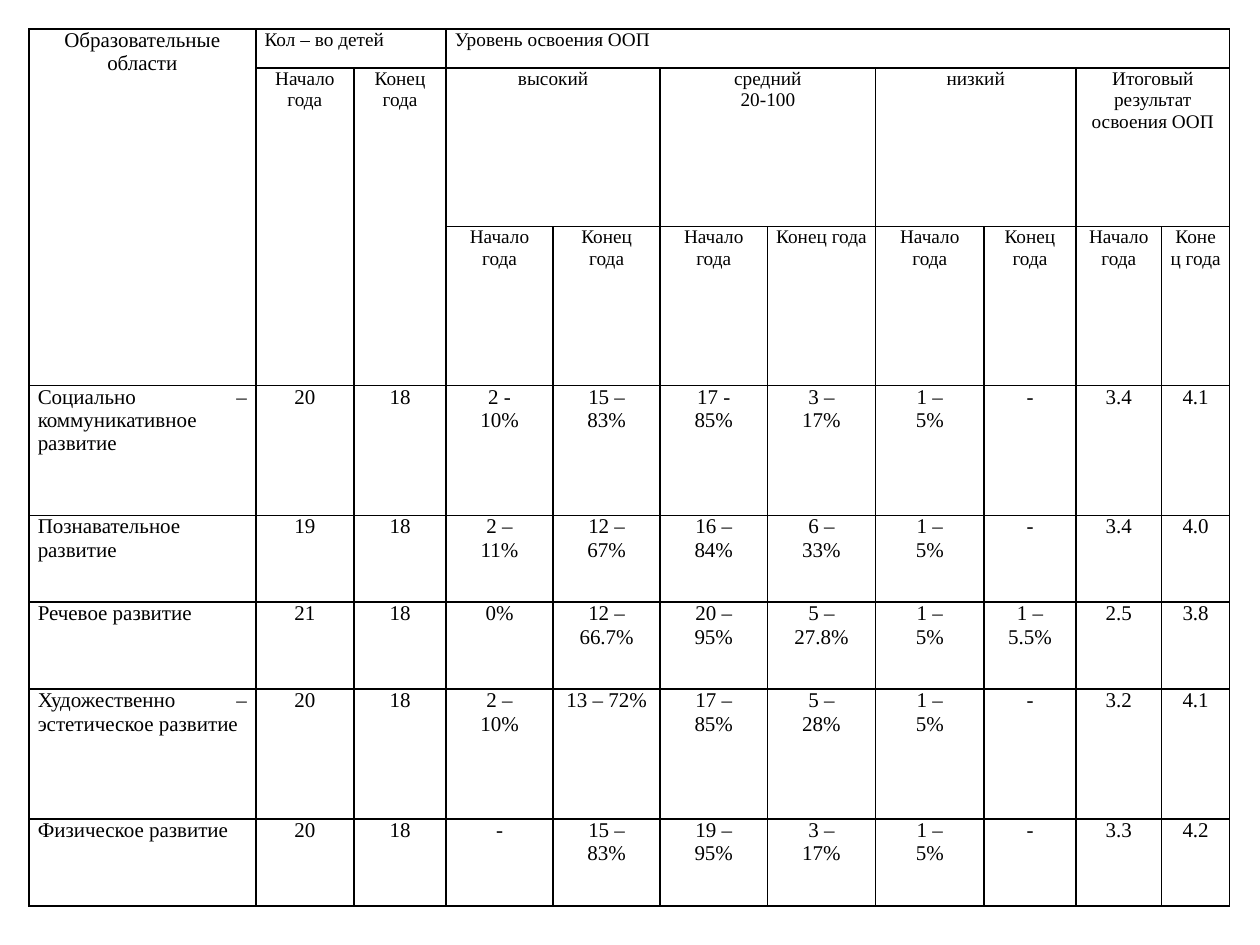
from lxml.etree import SubElement
from pptx import Presentation
from pptx.dml.color import RGBColor
from pptx.enum.text import PP_ALIGN as Align
from pptx.oxml.ns import qn
from pptx.util import Inches, Pt

BLACK = RGBColor(0, 0, 0)
FONT = "Times New Roman"
COLUMN_WIDTHS = [1.8, 0.78, 0.73, 0.85, 0.85, 0.85, 0.86, 0.86, 0.73, 0.68, 0.54]
ROW_HEIGHTS = [0.31, 1.26, 1.26, 1.03, 0.69, 0.69, 1.03, 0.69]
START, END = "Начало\nгода", "Конец года"
LEVELS = ["высокий", "средний\n20-100", "низкий", "Итоговый результат освоения ООП"]
RESULTS = [
    ["Социально – коммуникативное развитие", "20", "18", "2 -\n10%", "15 –\n83%",
     "17 -\n85%", "3 –\n17%", "1 –\n5%", "-", "3.4", "4.1"],
    ["Познавательное развитие", "19", "18", "2 –\n11%", "12 –\n67%",
     "16 –\n84%", "6 –\n33%", "1 –\n5%", "-", "3.4", "4.0"],
    ["Речевое развитие", "21", "18", "0%", "12 –\n66.7%",
     "20 –\n95%", "5 –\n27.8%", "1 –\n5%", "1 –\n5.5%", "2.5", "3.8"],
    ["Художественно – эстетическое развитие", "20", "18", "2 –\n10%", "13 – 72%",
     "17 –\n85%", "5 –\n28%", "1 –\n5%", "-", "3.2", "4.1"],
    ["Физическое развитие", "20", "18", "-", "15 –\n83%",
     "19 –\n95%", "3 –\n17%", "1 –\n5%", "-", "3.3", "4.2"],
]


def write(cell, text, size=11, align=Align.CENTER):
    """Put formatted text in a cell, one paragraph per line."""
    cell.text_frame.text = text
    for paragraph in cell.text_frame.paragraphs:
        paragraph.alignment = align
        paragraph.font.size = Pt(size)
        for run in paragraph.runs:
            run.font.size = Pt(size)
            run.font.name = FONT
            run.font.color.rgb = BLACK


def style_cell(cell):
    """Give a cell thin black borders, tight margins and no fill."""
    properties = cell._tc.get_or_add_tcPr()
    for side in ("a:lnL", "a:lnR", "a:lnT", "a:lnB"):
        line = SubElement(properties, qn(side), w=str(Pt(1)))
        fill = SubElement(line, qn("a:solidFill"))
        SubElement(fill, qn("a:srgbClr"), val=str(BLACK))
    cell.fill.background()
    cell.margin_left = cell.margin_right = Inches(0.07)
    cell.margin_top = cell.margin_bottom = 0


def fill_header(table):
    """Merge and label the three header rows."""
    def label(row, column, text, rows=1, columns=1, **style):
        cell = table.cell(row, column)
        if rows * columns > 1:
            cell.merge(table.cell(row + rows - 1, column + columns - 1))
        write(cell, text, **style)

    label(0, 0, "Образовательные области", rows=3, size=12)
    label(0, 1, "Кол – во детей", columns=2, align=Align.LEFT)
    label(0, 3, "Уровень освоения ООП", columns=8, align=Align.LEFT)
    label(1, 1, START, rows=2)
    label(1, 2, END, rows=2)
    for column, level in zip(range(3, 11, 2), LEVELS):
        label(1, column, level, columns=2)
        label(2, column, START)
        label(2, column + 1, END)


def fill_results(table):
    """Write one row for each educational area."""
    for row, values in enumerate(RESULTS, start=3):
        for column, value in enumerate(values):
            align = Align.CENTER if column else Align.JUSTIFY
            write(table.cell(row, column), value, size=12, align=align)


def add_results_table(slide, left, top, width, height):
    """Add the table of results in the given box."""
    frame = slide.shapes.add_table(
        len(ROW_HEIGHTS), len(COLUMN_WIDTHS), left, top, width, height)
    table = frame.table
    table.first_row = table.horz_banding = False
    for column, column_width in zip(table.columns, COLUMN_WIDTHS):
        column.width = Inches(column_width)
    for row, row_height in zip(table.rows, ROW_HEIGHTS):
        row.height = Inches(row_height)
    for cell in table.iter_cells():
        style_cell(cell)
    fill_header(table)
    fill_results(table)


def main():
    """Build and save the presentation."""
    presentation = Presentation()
    presentation.slide_width, presentation.slide_height = Inches(10), Inches(7.5)
    slide = presentation.slides.add_slide(presentation.slide_layouts[6])
    add_results_table(slide, Inches(0.23), Inches(0.23), Inches(9.53), Inches(6.95))
    presentation.save("out.pptx")


if __name__ == "__main__":
    main()
